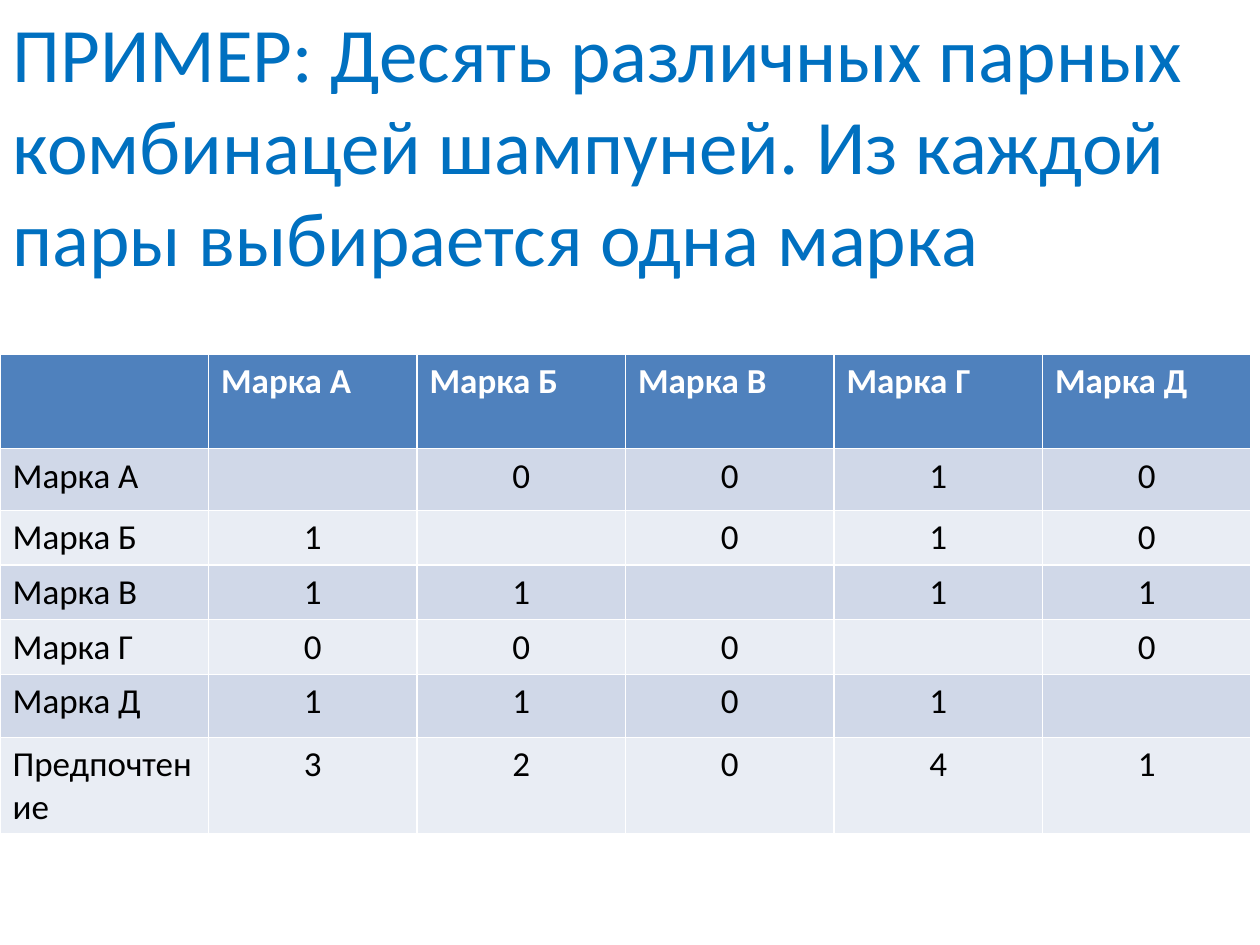
from dataclasses import dataclass

from pptx import Presentation
from pptx.dml.color import RGBColor
from pptx.enum.text import MSO_ANCHOR, MSO_AUTO_SIZE, PP_ALIGN
from pptx.util import Inches, Pt


@dataclass(frozen=True)
class Theme:
    font: str = "Calibri"
    title_size: int = 44
    table_size: int = 20
    title: str = "0070C0"
    header_text: str = "FFFFFF"
    body_text: str = "000000"
    header_fill: str = "4F81BD"
    bands: tuple[str, str] = ("D0D8E8", "E9EDF4")


@dataclass(frozen=True)
class TableRow:
    label: str
    values: tuple[str, ...]
    height: float


THEME = Theme()
TITLE = ("ПРИМЕР: Десять различных парных комбинацей шампуней. "
         "Из каждой пары выбирается одна марка")
BRANDS = tuple(f"Марка {letter}" for letter in "АБВГД")
CHOICES = (
    ("", "0", "0", "1", "0"),
    ("1", "", "0", "1", "0"),
    ("1", "1", "", "1", "1"),
    ("0", "0", "0", "", "0"),
    ("1", "1", "0", "1", ""),
)
BRAND_HEIGHTS = (0.49, 0.36, 0.43, 0.39, 0.5)
ROWS = (
    TableRow("", BRANDS, 0.75),
    *map(TableRow, BRANDS, CHOICES, BRAND_HEIGHTS),
    TableRow("Предпочтение", ("3", "2", "0", "4", "1"), 0.75),
)


def style_paragraph(para, size: int, color: str, bold: bool, align) -> None:
    para.alignment = align
    para.font.name = THEME.font
    para.font.size = Pt(size)
    para.font.bold = bold
    para.font.color.rgb = RGBColor.from_string(color)


def fill_cell(cell, text: str, fill: str, color: str, bold: bool, align) -> None:
    cell.fill.solid()
    cell.fill.fore_color.rgb = RGBColor.from_string(fill)
    cell.text = text
    style_paragraph(cell.text_frame.paragraphs[0], THEME.table_size, color, bold, align)


def add_title(page) -> None:
    box = page.shapes.title
    box.left, box.top = Inches(0), Inches(-0.01)
    box.width, box.height = Inches(10.12), Inches(2.32)
    frame = box.text_frame
    frame.text = TITLE
    frame.word_wrap = True
    frame.auto_size = MSO_AUTO_SIZE.SHAPE_TO_FIT_TEXT
    frame.vertical_anchor = MSO_ANCHOR.TOP
    style_paragraph(frame.paragraphs[0], THEME.title_size, THEME.title, False, PP_ALIGN.LEFT)


def add_choice_table(page) -> None:
    height = sum(row.height for row in ROWS)
    table = page.shapes.add_table(
        len(ROWS), len(BRANDS) + 1, Inches(0), Inches(2.81), Inches(9.93), Inches(height)
    ).table
    for row_index, row in enumerate(ROWS):
        table.rows[row_index].height = Inches(row.height)
        header = row_index == 0
        fill = THEME.header_fill if header else THEME.bands[(row_index - 1) % 2]
        color = THEME.header_text if header else THEME.body_text
        for column, text in enumerate((row.label, *row.values)):
            align = PP_ALIGN.LEFT if header or column == 0 else PP_ALIGN.CENTER
            fill_cell(table.cell(row_index, column), text, fill, color, header, align)


def main() -> None:
    deck = Presentation()
    deck.slide_width, deck.slide_height = Inches(10), Inches(7.5)
    page = deck.slides.add_slide(deck.slide_layouts.get_by_name("Title Only"))
    add_title(page)
    add_choice_table(page)
    deck.save("out.pptx")


if __name__ == "__main__":
    main()
